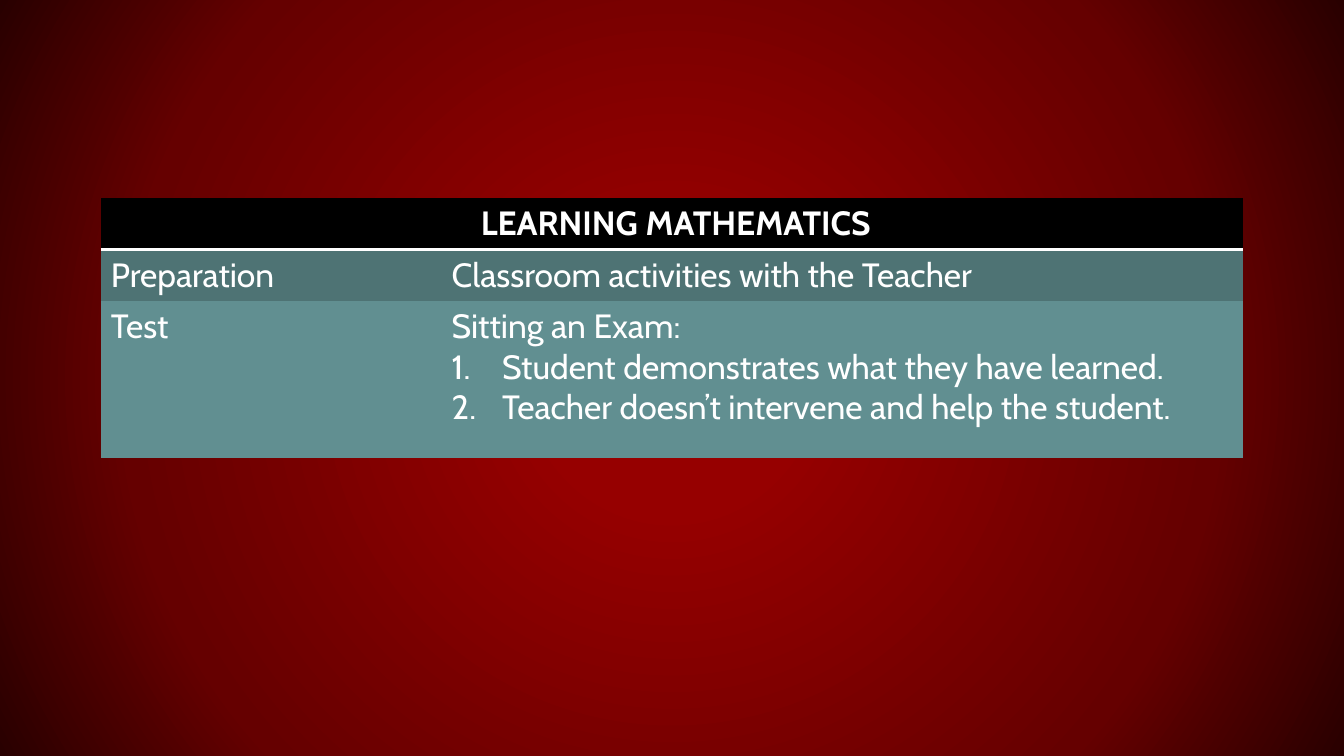
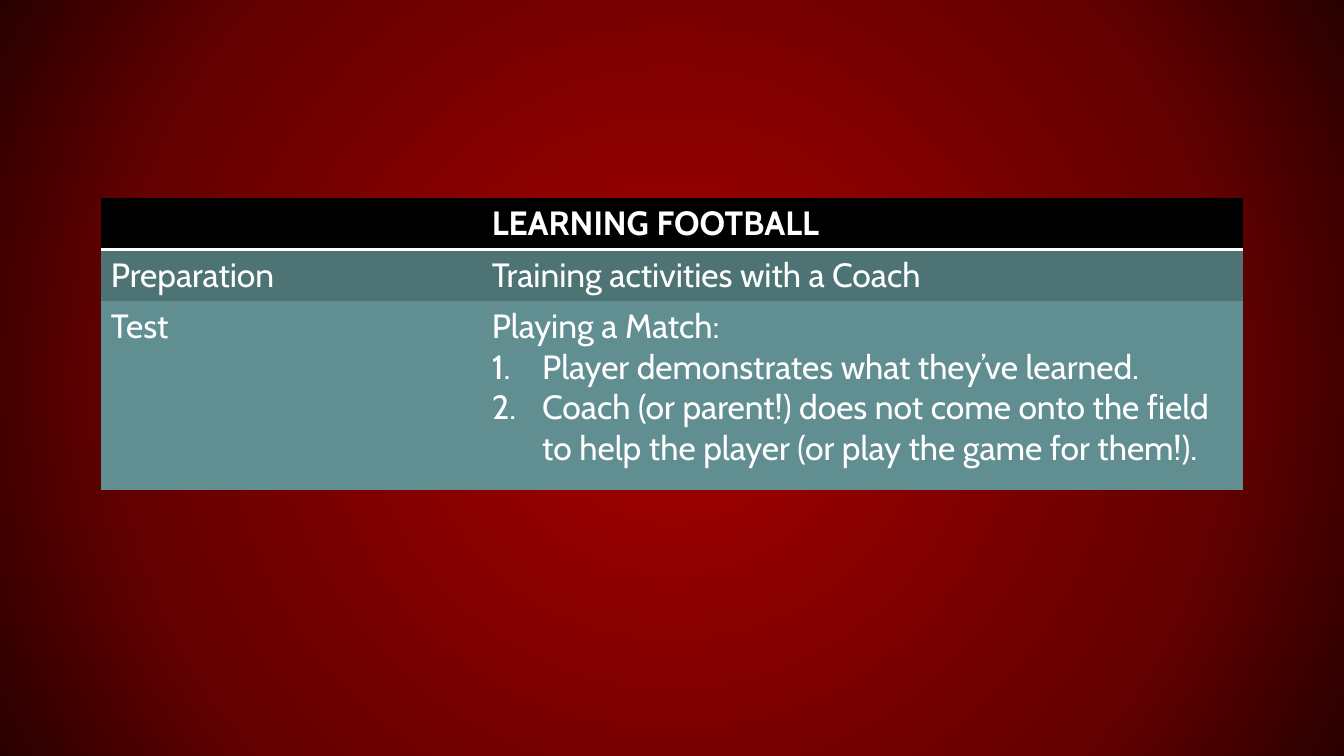
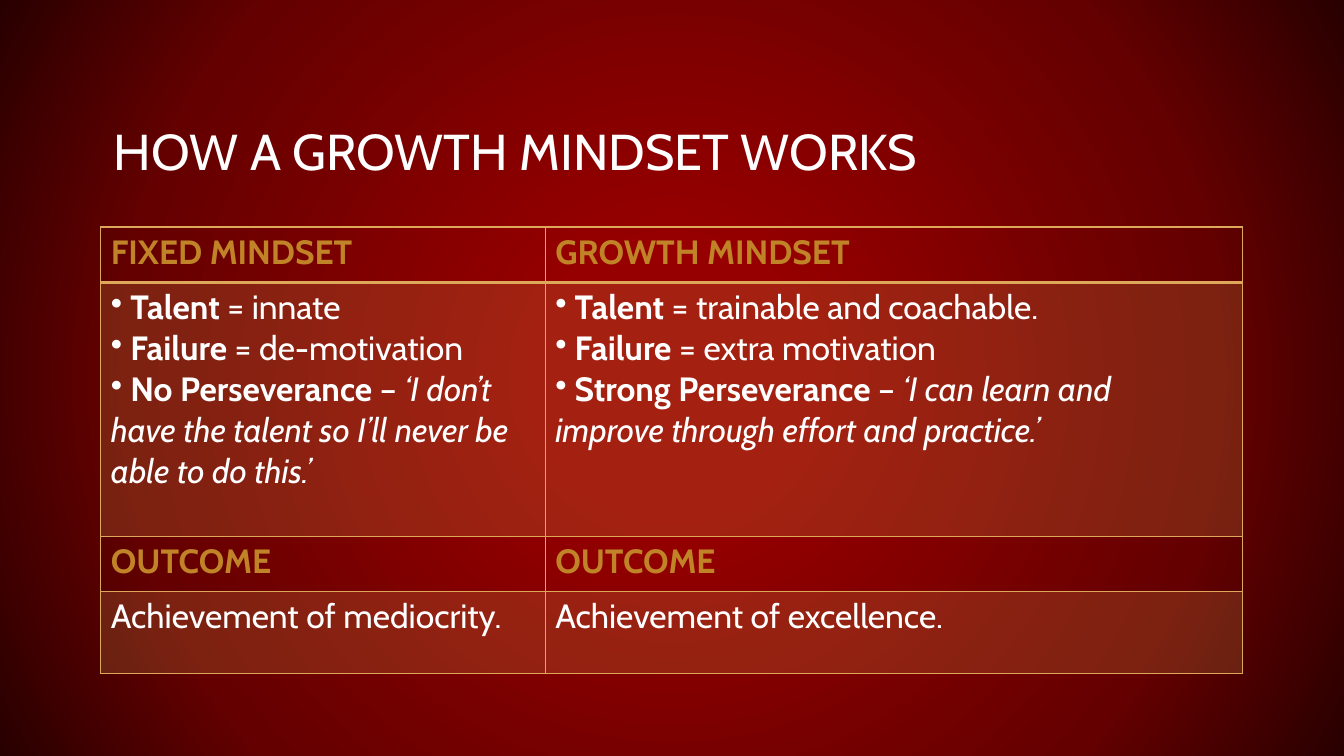
"""Build three slides on learning, testing and the growth mindset."""
from lxml import etree
from pptx import Presentation
from pptx.dml.color import RGBColor
from pptx.enum.text import MSO_ANCHOR, PP_ALIGN
from pptx.oxml import parse_xml
from pptx.oxml.ns import nsdecls, qn
from pptx.util import Cm, Pt

LEFT, CENTER = PP_ALIGN.LEFT, PP_ALIGN.CENTER
BOTTOM = MSO_ANCHOR.BOTTOM

FONT = "Cabin"
WHITE, BLACK = "FFFFFF", "000000"
DARK_TEAL, TEAL = "4E7374", "618F91"
GOLD, PALE_GOLD = "C18328", "DDA859"
GLOW = [(17, "960000"), (71, "650000"), (100, "290000")]
NO_STYLE = "{2D5ABB26-0587-4C30-8999-92F81FD0307C}"
MARGIN, CONTENT_WIDTH = 2.54, 28.78

HEADING, PLAIN, NUMBER, DOT = "heading", "plain", "number", "dot"
RUN_STYLES = {HEADING: ["bold"], PLAIN: [""], NUMBER: [""],
              DOT: ["", "bold", "", "italic"]}


def paint(fill, color, opacity=100):
    """Fill a cell or a font with a hex colour."""
    fill.solid()
    fill.fore_color.rgb = RGBColor.from_string(color)
    if opacity < 100:
        for node in fill._xPr.iter(qn("a:srgbClr")):
            etree.SubElement(node, qn("a:alpha"), val=str(opacity * 1000))


def draw_border(cell, side, color, width):
    """Draw one side (L, R, T or B) of a cell."""
    cell._tc.get_or_add_tcPr().append(parse_xml(
        f'<a:ln{side} {nsdecls("a")} w="{Pt(width)}"><a:solidFill>'
        f'<a:srgbClr val="{color}"/></a:solidFill></a:ln{side}>'))


teal_look = {
    "fills": [(BLACK, 100), (DARK_TEAL, 100), (TEAL, 100)],
    "text": [WHITE] * 3,
    "borders": [{"B": (WHITE, 2)}, {}, {}],
    "inset": 0.25,
}
gold_box = {side: (PALE_GOLD, 1) for side in "LRTB"}
gold_look = {
    "fills": [None, (PALE_GOLD, 20)] * 2,
    "text": [GOLD, WHITE] * 2,
    "borders": [{**gold_box, "B": (PALE_GOLD, 2)},
                {**gold_box, "T": (PALE_GOLD, 2)}, gold_box, gold_box],
    "inset": 0.4,
}

lessons = [
    {
        "title": None, "look": teal_look, "top": 5, "first_column": 8.59,
        "heights": [1.29, 1.29, 3.97],
        "rows": [
            [[(HEADING, " LEARNING MATHEMATICS")], None],
            [[(PLAIN, "Preparation")],
             [(PLAIN, "Classroom activities with the Teacher")]],
            [[(PLAIN, "Test")],
             [(PLAIN, "Sitting an Exam:"),
              (NUMBER, "Student demonstrates what they have learned."),
              (NUMBER, "Teacher doesn’t intervene and help the student.")]],
        ],
    },
    {
        "title": None, "look": teal_look, "top": 5, "first_column": 9.6,
        "heights": [1.29, 1.29, 4.76],
        "rows": [
            [[], [(HEADING, "LEARNING FOOTBALL")]],
            [[(PLAIN, "Preparation")],
             [(PLAIN, "Training activities with a Coach")]],
            [[(PLAIN, "Test")],
             [(PLAIN, "Playing a Match:"),
              (NUMBER, "Player demonstrates what they’ve learned."),
              (NUMBER, "Coach (or parent!) does not come onto the field "
                       "to help the player (or play the game for them!).")]],
        ],
    },
    {
        "title": "HOW A GROWTH MINDSET WORKS", "look": gold_look,
        "top": 5.72, "first_column": 11.2,
        "heights": [1.4, 6.4, 1.38, 2.07],
        "rows": [
            [[(HEADING, "FIXED MINDSET")], [(HEADING, "GROWTH MINDSET")]],
            [[(DOT, " ", "Talent", " = innate"),
              (DOT, " ", "Failure", " = de-motivation"),
              (DOT, " ", "No Perseverance", " – ",
               "‘I don’t have the talent so I’ll never be able to do this.’")],
             [(DOT, " ", "Talent", " = trainable and coachable."),
              (DOT, " ", "Failure", " = extra motivation"),
              (DOT, " ", "Strong Perseverance", " – ",
               "‘I can learn and improve through effort and practice.’")]],
            [[(HEADING, "OUTCOME")], [(HEADING, "OUTCOME")]],
            [[(PLAIN, "Achievement of mediocrity.")],
             [(PLAIN, "Achievement of excellence.")]],
        ],
    },
]

prs = Presentation()
prs.slide_width, prs.slide_height = Cm(33.87), Cm(19.05)
title_layout, blank_layout = prs.slide_layouts[5], prs.slide_layouts[6]

stops = "".join(f'<a:gs pos="{pos * 1000}"><a:srgbClr val="{color}"/></a:gs>'
                for pos, color in GLOW)
master_content = prs.slide_master.element.find(qn("p:cSld"))
for old_background in master_content.findall(qn("p:bg")):
    master_content.remove(old_background)
master_content.insert(0, parse_xml(
    f'<p:bg {nsdecls("p", "a")}><p:bgPr><a:gradFill rotWithShape="1">'
    f'<a:gsLst>{stops}</a:gsLst><a:path path="circle">'
    '<a:fillToRect l="50000" t="50000" r="50000" b="50000"/></a:path>'
    '</a:gradFill><a:effectLst/></p:bgPr></p:bg>'))

for lesson in lessons:
    slide = prs.slides.add_slide(title_layout if lesson["title"] else blank_layout)
    if lesson["title"]:
        title = slide.shapes.title
        title.left, title.top = Cm(MARGIN), Cm(1.35)
        title.width, title.height = Cm(CONTENT_WIDTH), Cm(3.38)
        frame = title.text_frame
        frame.text = lesson["title"]
        frame.vertical_anchor = BOTTOM
        frame.margin_left = frame.margin_right = Cm(0.33)
        frame.margin_top = frame.margin_bottom = Cm(0.18)
        heading = frame.paragraphs[0]
        heading.alignment, heading.line_spacing = LEFT, 0.8
        font = heading.runs[0].font
        font.name, font.size = FONT, Pt(36)
        paint(font.fill, WHITE)

    look, rows, heights = lesson["look"], lesson["rows"], lesson["heights"]
    grid = slide.shapes.add_table(
        len(rows), 2, Cm(MARGIN), Cm(lesson["top"]),
        Cm(CONTENT_WIDTH), Cm(sum(heights)))
    for style_id in grid.element.iter(qn("a:tableStyleId")):
        style_id.text = NO_STYLE
    table = grid.table
    table.columns[0].width = Cm(lesson["first_column"])
    table.columns[1].width = Cm(CONTENT_WIDTH - lesson["first_column"])

    for r, row in enumerate(rows):
        table.rows[r].height = Cm(heights[r])
        for c, content in enumerate(row):
            cell = table.cell(r, c)
            for side, (color, width) in look["borders"][r].items():
                draw_border(cell, side, color, width)
            if look["fills"][r]:
                paint(cell.fill, *look["fills"][r])
            else:
                cell.fill.background()
            cell.margin_right = Cm(look["inset"])
            if content is None:
                table.cell(r, 0).merge(cell)
                table.cell(r, 0).text_frame.paragraphs[0].alignment = CENTER
                continue
            for i, (kind, *texts) in enumerate(content):
                frame = cell.text_frame
                paragraph = frame.add_paragraph() if i else frame.paragraphs[0]
                properties = paragraph._p.get_or_add_pPr()
                if kind == NUMBER:
                    properties.set("marL", str(Cm(1.27)))
                    properties.set("indent", str(-Cm(1.27)))
                    etree.SubElement(properties, qn("a:buAutoNum"), type="arabicPeriod")
                elif kind == DOT:
                    etree.SubElement(properties, qn("a:buChar"), char="•")
                for text, style in zip(texts, RUN_STYLES[kind]):
                    run = paragraph.add_run()
                    run.text = text
                    font = run.font
                    font.name, font.size = FONT, Pt(24)
                    font.bold, font.italic = style == "bold", style == "italic"
                    paint(font.fill, look["text"][r])

prs.save("out.pptx")
